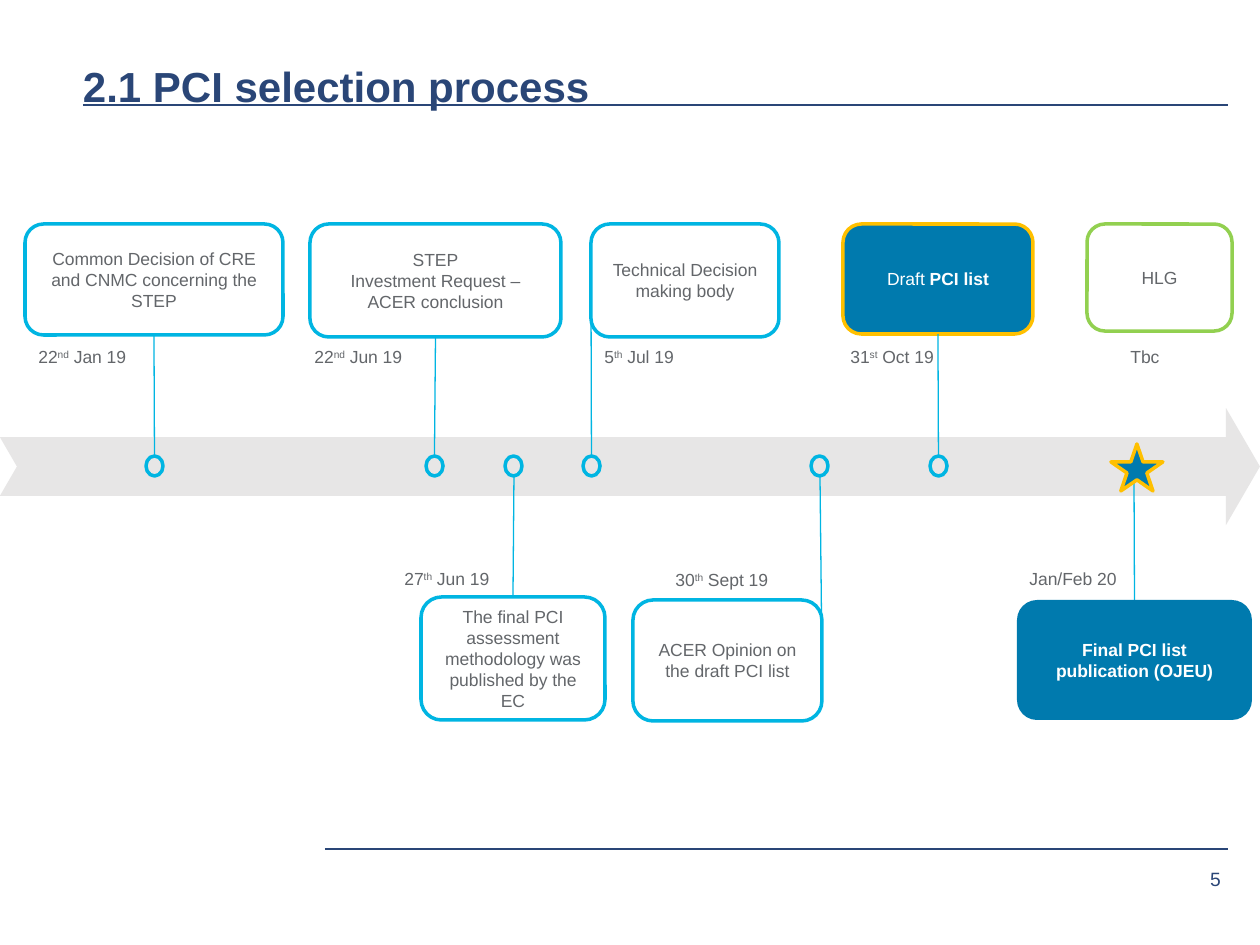
from dataclasses import dataclass

from lxml.etree import SubElement
from pptx import Presentation
from pptx.dml.color import RGBColor
from pptx.enum.shapes import MSO_CONNECTOR as Connector, MSO_SHAPE as Preset
from pptx.enum.text import MSO_ANCHOR as Anchor, MSO_AUTO_SIZE as AutoSize, PP_ALIGN as Align
from pptx.oxml.ns import qn
from pptx.util import Pt

EMU_PER_PX = 914400 / 126
TOP, LEFT, BOTTOM, RIGHT = range(4)


@dataclass(frozen=True)
class Theme:
    """Colours, type sizes and line widths of the slide."""
    font: str = "Arial"
    navy: str = "2A4677"
    cyan: str = "00B5E2"
    blue: str = "007AAE"
    gold: str = "FFC000"
    green: str = "92D050"
    band: str = "E7E6E6"
    grey: str = "63666A"
    white: str = "FFFFFF"
    title_size: int = 24
    body_size: int = 10
    number_size: int = 11
    outline: float = 2
    rule: float = 1.5
    stem: float = 0.75


THEME = Theme()


@dataclass(frozen=True)
class Box:
    """A rectangle in px."""
    x: int
    y: int
    w: int
    h: int

    def inner(self, x, y, w, h):
        """Return a box placed relative to this one."""
        return Box(self.x + x, self.y + y, w, h)

    def emu(self):
        """Return left, top, width and height in EMU."""
        return [px(n) for n in (self.x, self.y, self.w, self.h)]


@dataclass(frozen=True)
class Look:
    """Fill, outline and text style of a card."""
    fill: str = None
    line: str = THEME.cyan
    ink: str = THEME.grey
    bold: bool = False


PLAIN = Look()
DRAFT = Look(THEME.blue, THEME.gold, THEME.white)
FINAL = Look(THEME.blue, None, THEME.white, True)
OPEN = Look(line=THEME.green)

MILESTONES = [
    ("Common Decision of CRE and CNMC concerning the STEP", (25, 0, 258, 111),
     "22^nd^ Jan 19", (26, 116, 116, 34), 146, BOTTOM, PLAIN),
    ("STEP\nInvestment Request – ACER conclusion", (310, 0, 251, 113),
     "22^nd^ Jun 19", (302, 116, 116, 34), 426, BOTTOM, PLAIN),
    ("The final PCI assessment methodology was published by the EC", (421, 373, 184, 123),
     "27^th^ Jun 19", (392, 338, 112, 34), 505, TOP, PLAIN),
    ("Technical Decision making body", (591, 0, 188, 113),
     "5^th^ Jul 19", (592, 116, 97, 34), 583, LEFT, PLAIN),
    ("ACER Opinion on the draft PCI list", (633, 376, 189, 121),
     "30^th^ Sept 19", (663, 339, 120, 34), 811, RIGHT, PLAIN),
    ("Draft *PCI list*", (843, 0, 190, 110),
     "31^st^ Oct 19", (838, 116, 111, 34), 930, BOTTOM, DRAFT),
    ("Final PCI list publication (OJEU)", (1017, 376, 235, 120),
     "Jan/Feb 20", (1017, 338, 113, 34), None, TOP, FINAL),
    ("HLG", (1087, 0, 145, 107), "Tbc", (1118, 116, 55, 34), None, None, OPEN),
]


def px(length):
    """Turn px into EMU."""
    return round(length * EMU_PER_PX)


def write(frame, text, size=THEME.body_size, color=THEME.grey, bold=False,
          align=Align.LEFT, anchor=Anchor.TOP, wrap=True, insets=None, spacing=None):
    """Fill a text frame, with *bold* and ^superscript^ marks."""
    frame.word_wrap = wrap
    frame.vertical_anchor = anchor
    if insets:
        (frame.margin_left, frame.margin_top,
         frame.margin_right, frame.margin_bottom) = map(px, insets)
    for index, line in enumerate(text.split("\n")):
        paragraph = frame.add_paragraph() if index else frame.paragraphs[0]
        paragraph.alignment = align
        paragraph.line_spacing = spacing
        for strong, part in enumerate(line.split("*")):
            for raised, piece in enumerate(part.split("^")):
                if not piece:
                    continue
                run = paragraph.add_run()
                run.text = piece
                font = run.font
                font.name, font.size = THEME.font, Pt(size)
                font.bold = bold or strong % 2 == 1
                font.color.rgb = RGBColor.from_string(color)
                if raised % 2:
                    run._r.get_or_add_rPr().set("baseline", "30000")


def add_preset(slide, preset, box, fill=None, line=None):
    """Add a preset shape without shadow."""
    shape = slide.shapes.add_shape(preset, *box.emu())
    shape.shadow.inherit = False
    if fill:
        shape.fill.solid()
        shape.fill.fore_color.rgb = RGBColor.from_string(fill)
    else:
        shape.fill.background()
    if line:
        shape.line.color.rgb = RGBColor.from_string(line)
        shape.line.width = Pt(THEME.outline)
    else:
        shape.line.fill.background()
    return shape


def add_line(slide, start, end, color, width):
    """Add a straight connector between two px points."""
    line = slide.shapes.add_connector(
        Connector.STRAIGHT, *(px(n) for n in (*start, *end)))
    line.line.color.rgb = RGBColor.from_string(color)
    line.line.width = Pt(width)
    SubElement(line._element.spPr, qn("a:effectLst"))
    return line


def add_header(slide, box):
    """Place the title and the rule below it."""
    add_line(slide, (box.x, box.y + 60), (box.x + box.w, box.y + 60), THEME.navy, THEME.rule)
    title = slide.shapes.title
    title.left, title.top, title.width, title.height = box.inner(0, 0, 1148, 50).emu()
    title.text_frame.auto_size = AutoSize.NONE
    write(title.text_frame, "2.1 PCI selection process", size=THEME.title_size,
          color=THEME.navy, bold=True, insets=(0, 5, 0, 0), spacing=1.2)


def add_footer(slide, box):
    """Place the bottom rule and the page number."""
    add_line(slide, (box.x, box.y), (box.x + box.w, box.y), THEME.navy, THEME.rule)
    number = slide.shapes.add_textbox(*box.inner(box.w - 107, 10, 100, 39).emu())
    write(number.text_frame, "5", size=THEME.number_size, color=THEME.navy,
          align=Align.RIGHT, anchor=Anchor.MIDDLE, wrap=False, insets=(0, 0, 0, 0))


def add_milestone(slide, box, text, card_at, date, date_at, dot_x, side, look):
    """Place one card with its date, and its stem and dot on the band."""
    card = add_preset(slide, Preset.ROUNDED_RECTANGLE, box.inner(*card_at), look.fill, look.line)
    write(card.text_frame, text, color=look.ink, bold=look.bold,
          align=Align.CENTER, anchor=Anchor.MIDDLE)
    label = slide.shapes.add_textbox(*box.inner(*date_at).emu())
    write(label.text_frame, date, wrap=False)
    label.text_frame.auto_size = AutoSize.SHAPE_TO_FIT_TEXT
    if side is None:
        return
    above = card_at[1] == 0
    tip_x = card_at[0] + card_at[2] // 2 if dot_x is None else dot_x + 9
    tip = (box.x + tip_x, box.y + (232 if above else 252))
    stem = add_line(slide, tip, tip, THEME.cyan, THEME.stem)
    stem.begin_connect(card, side)
    if dot_x is not None:
        dot = add_preset(slide, Preset.OVAL, box.inner(dot_x, 232, 17, 20), line=THEME.cyan)
        if above:
            stem.end_connect(dot, TOP)


def add_timeline(slide, box):
    """Place the arrow band, the milestones and the closing star."""
    band = add_preset(slide, Preset.NOTCHED_RIGHT_ARROW, box.inner(0, 184, box.w, 117), THEME.band)
    band.adjustments[0], band.adjustments[1] = 0.5, 0.29
    for milestone in MILESTONES:
        add_milestone(slide, box, *milestone)
    add_preset(slide, Preset.STAR_5_POINT, box.inner(1111, 220, 52, 47), THEME.blue, THEME.gold)


def main():
    """Build and save the slide."""
    deck = Presentation()
    deck.slide_width, deck.slide_height = px(1260), px(945)
    slide = deck.slides.add_slide(deck.slide_layouts[5])
    add_header(slide, Box(83, 45, 1145, 60))
    add_timeline(slide, Box(0, 224, 1260, 497))
    add_footer(slide, Box(325, 849, 903, 49))
    deck.save("out.pptx")


if __name__ == "__main__":
    main()
